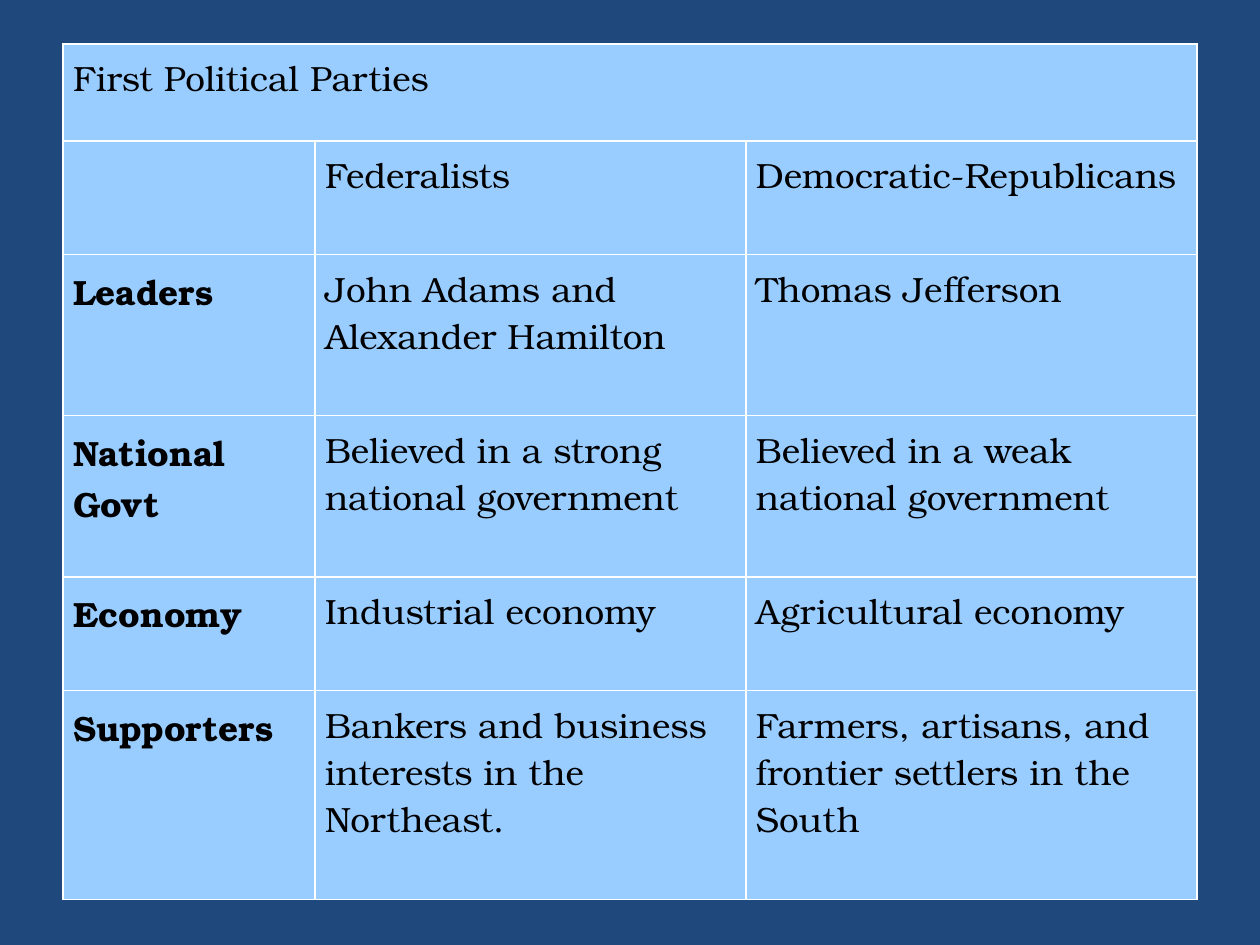
from lxml import etree
from pptx import Presentation
from pptx.dml.color import RGBColor
from pptx.oxml import ns
from pptx.util import Inches, Pt

NAVY, SKY, WHITE, BLACK = "1F497D", "99CCFF", "FFFFFF", "000000"
FONT = "TeX Gyre Bonum"
COLUMN_WIDTHS = [2, 3.42, 3.58]
ROW_HEIGHTS = [0.77, 0.9, 1.28, 1.28, 0.9, 1.66]
PARTIES = [
    ["First Political Parties", "", ""],
    ["", "Federalists", "Democratic-Republicans"],
    ["Leaders", "John Adams and Alexander Hamilton", "Thomas Jefferson"],
    ["National Govt", "Believed in a strong national government",
     "Believed in a weak national government"],
    ["Economy", "Industrial economy", "Agricultural economy"],
    ["Supporters", "Bankers and business interests in the Northeast.",
     "Farmers, artisans, and frontier settlers in the South"],
]


def paint(fill, color):
    fill.solid()
    fill.fore_color.rgb = RGBColor.from_string(color)


def add_borders(cell, color, width):
    properties = cell._tc.get_or_add_tcPr()
    for side in ("lnL", "lnR", "lnT", "lnB"):
        line = etree.SubElement(properties, ns.qn(f"a:{side}"), w=str(width))
        solid = etree.SubElement(line, ns.qn("a:solidFill"))
        etree.SubElement(solid, ns.qn("a:srgbClr"), val=color)


def style_cell(cell, wording, bold):
    add_borders(cell, WHITE, Pt(1))
    paint(cell.fill, SKY)
    cell.margin_left = cell.margin_right = cell.margin_top = Inches(0.08)
    cell.margin_bottom = 0
    cell.text = wording
    paragraph = cell.text_frame.paragraphs[0]
    paragraph.space_after = Pt(2.9)
    paragraph.font.name = FONT
    paragraph.font.size = Pt(20)
    paragraph.font.bold = bold
    paragraph.font.color.rgb = RGBColor.from_string(BLACK)


def add_party_table(slide, left, top, width, height):
    parties = slide.shapes.add_table(
        len(ROW_HEIGHTS), len(COLUMN_WIDTHS), left, top, width, height).table
    parties.first_row = parties.horz_banding = False
    for column, column_width in zip(parties.columns, COLUMN_WIDTHS):
        column.width = Inches(column_width)
    for row, row_height in zip(parties.rows, ROW_HEIGHTS):
        row.height = Inches(row_height)

    # Topics in the first column are bold, below the two heading rows
    for r, wordings in enumerate(PARTIES):
        for c, wording in enumerate(wordings):
            style_cell(parties.cell(r, c), wording, bold=c == 0 and r > 1)

    # Title across all columns
    parties.cell(0, 0).merge(parties.cell(0, len(COLUMN_WIDTHS) - 1))


def main():
    deck = Presentation()
    deck.slide_width, deck.slide_height = Inches(10), Inches(7.5)
    slide = deck.slides.add_slide(deck.slide_layouts[6])
    paint(slide.background.fill, NAVY)
    add_party_table(slide, Inches(0.5), Inches(0.35), Inches(9), Inches(6.78))
    deck.save("out.pptx")


if __name__ == "__main__":
    main()
